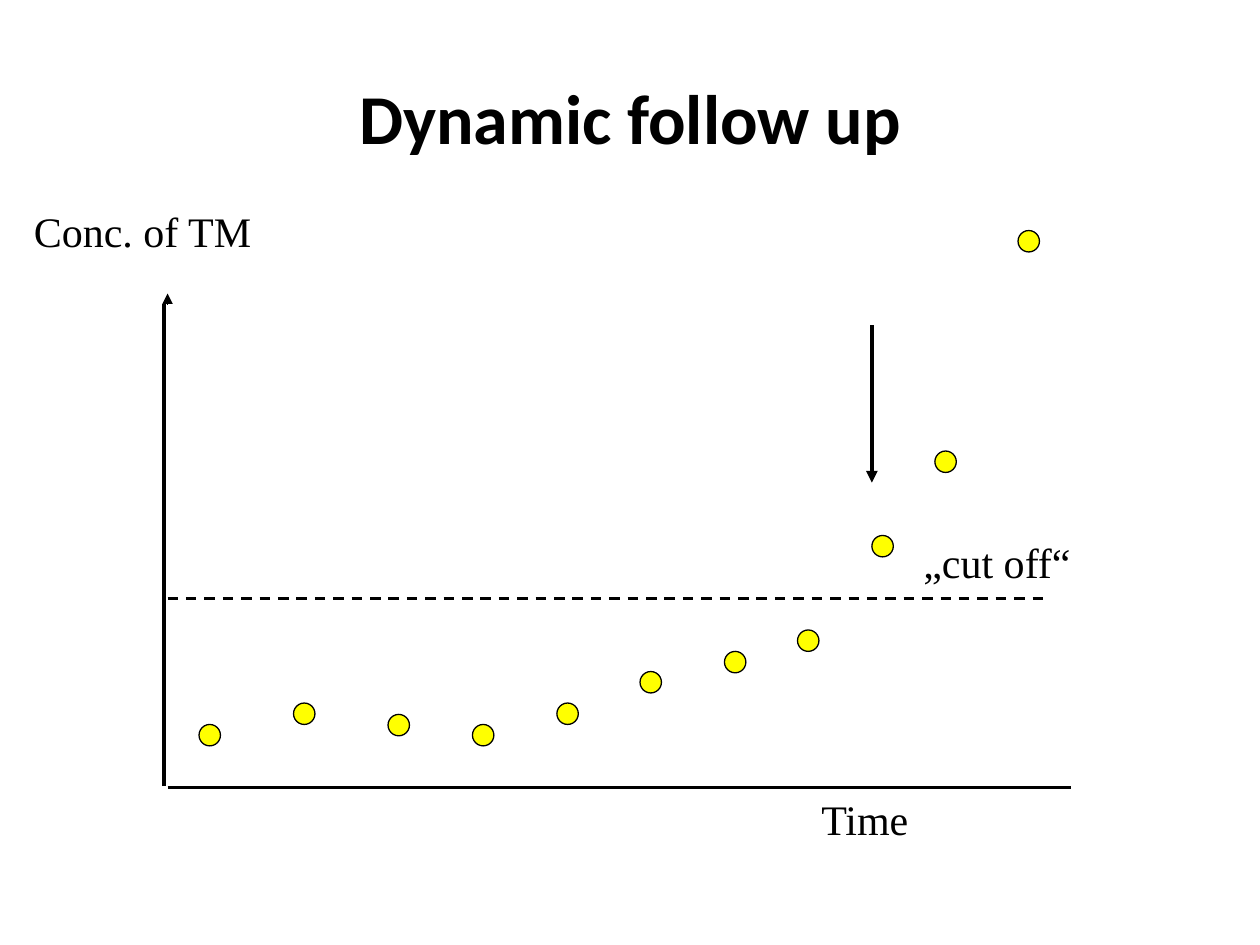
from lxml import etree
from pptx import Presentation
from pptx.dml.color import RGBColor
from pptx.enum import dml, shapes, text
from pptx.oxml.ns import qn
from pptx.util import Inches, Pt

BLACK, YELLOW = "000000", "FFFF00"
MARKER_SIZE = 0.17
# Left and top of each measured concentration, in order of time
MEASUREMENTS = [
    (1.58, 5.75), (2.33, 5.58), (3.08, 5.67), (3.75, 5.75),
    (4.42, 5.58), (5.08, 5.33), (5.75, 5.17), (6.33, 5),
    (6.92, 4.25), (7.42, 3.58), (8.08, 1.83),
]


def rgb(value):
    return RGBColor.from_string(value)


def write(frame, content, font="Times New Roman", size=24, color=BLACK,
          bold=False, align=text.PP_ALIGN.LEFT,
          anchor=text.MSO_ANCHOR.TOP, wrap=False):
    frame.word_wrap = wrap
    frame.vertical_anchor = anchor
    paragraph = frame.paragraphs[0]
    paragraph.alignment = align
    run = paragraph.add_run()
    run.text = content
    run.font.name = font
    run.font.size = Pt(size)
    run.font.bold = bold
    run.font.color.rgb = rgb(color)


def add_title(slide, content):
    title = slide.shapes.title
    title.left, title.top = Inches(0.5), Inches(0.3)
    title.width, title.height = Inches(9), Inches(1.25)
    write(title.text_frame, content, font="Calibri", size=40, bold=True,
          align=text.PP_ALIGN.CENTER, anchor=text.MSO_ANCHOR.MIDDLE, wrap=True)


def add_label(slide, content, left, top, width, height=0.51):
    label = slide.shapes.add_textbox(
        Inches(left), Inches(top), Inches(width), Inches(height))
    write(label.text_frame, content)
    label.text_frame.auto_size = text.MSO_AUTO_SIZE.SHAPE_TO_FIT_TEXT


def add_line(slide, start, end, width=2.25, dashed=False, arrow=False):
    connector = slide.shapes.add_connector(
        shapes.MSO_CONNECTOR.STRAIGHT,
        *(Inches(length) for length in (*start, *end)))
    connector.line.color.rgb = rgb(BLACK)
    connector.line.width = Pt(width)
    if dashed:
        connector.line.dash_style = dml.MSO_LINE.DASH
    if arrow:
        outline = connector.line._get_or_add_ln()
        etree.SubElement(outline, qn("a:tailEnd"), type="triangle")
    # An empty effect list removes the theme shadow
    etree.SubElement(connector._element.spPr, qn("a:effectLst"))


def add_marker(slide, left, top):
    marker = slide.shapes.add_shape(
        shapes.MSO_SHAPE.OVAL, Inches(left), Inches(top),
        Inches(MARKER_SIZE), Inches(MARKER_SIZE))
    marker.shadow.inherit = False
    marker.fill.solid()
    marker.fill.fore_color.rgb = rgb(YELLOW)
    marker.line.color.rgb = rgb(BLACK)
    marker.line.width = Pt(0.75)


def main():
    deck = Presentation()
    deck.slide_width, deck.slide_height = Inches(10), Inches(7.5)
    slide = deck.slides.add_slide(deck.slide_layouts[5])
    add_title(slide, "Dynamic follow up")

    # Axes, with the arrow tip of the concentration axis
    add_line(slide, (1.33, 6.25), (8.5, 6.25))
    add_line(slide, (1.3, 6.24), (1.3, 2.41))
    add_line(slide, (1.33, 2.42), (1.33, 2.33), width=0.75, arrow=True)

    # Cut-off level and measurements
    add_line(slide, (1.33, 4.75), (8.33, 4.75), width=1.5, dashed=True)
    for left, top in MEASUREMENTS:
        add_marker(slide, left, top)

    # Arrow to the first measurement above the cut-off
    add_line(slide, (6.92, 2.58), (6.92, 3.83), arrow=True)

    # Labels
    add_label(slide, "Conc. of TM", 0.17, 1.58, 2.02)
    add_label(slide, "Time", 6.42, 6.25, 0.9)
    add_label(slide, "„cut off“", 7.23, 4.21, 1.38, 0.5)

    deck.save("out.pptx")


if __name__ == "__main__":
    main()
